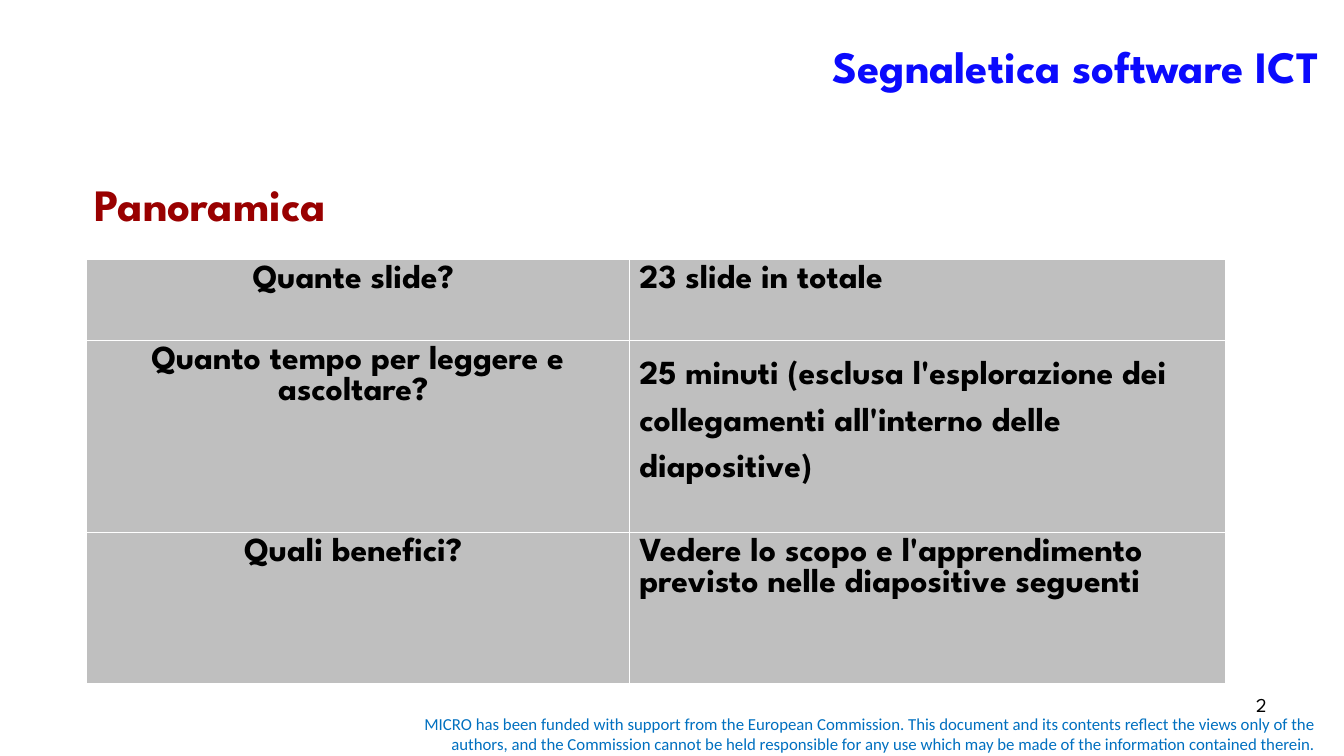
from lxml.etree import SubElement
from pptx import Presentation
from pptx.dml.color import RGBColor
from pptx.enum.text import MSO_ANCHOR, PP_ALIGN
from pptx.oxml.ns import qn
from pptx.util import Pt

SPARTAN = "League Spartan"
ROWS = [
    ("Quante slide? ", "23 slide in totale"),
    ("Quanto tempo per leggere e ascoltare? ",
     "25 minuti (esclusa l'esplorazione dei collegamenti all'interno delle diapositive)"),
    ("Quali benefici? ",
     "Vedere lo scopo e l'apprendimento previsto nelle diapositive seguenti"),
]
FUNDING = (
    "MICRO has been funded with support from the European Commission. "
    "This document and its contents reflect the views only of the authors, "
    "and the Commission cannot be held responsible for any use which may be "
    "made of the information contained therein."
)


def color(code):
    return RGBColor.from_string(code)


def style(frame, text, size, code, bold=False, align=PP_ALIGN.LEFT, face=SPARTAN):
    frame.text = text
    para = frame.paragraphs[0]
    para.alignment = align
    font = para.runs[0].font
    font.name, font.size, font.bold = face, Pt(size), bold
    font.color.rgb = color(code)
    return para


def label(slide, box, text, size, code, anchor=MSO_ANCHOR.TOP, **look):
    frame = slide.shapes.add_textbox(*map(Pt, box)).text_frame
    frame.word_wrap = True
    frame.vertical_anchor = anchor
    style(frame, text, size, code, **look)


def border(cell):
    props = cell._tc.get_or_add_tcPr()
    for at, side in enumerate(("lnL", "lnR", "lnT", "lnB")):
        line = SubElement(props, qn(f"a:{side}"), w=str(Pt(1)))
        fill = SubElement(line, qn("a:solidFill"))
        SubElement(fill, qn("a:srgbClr"), val="FFFFFF")
        props.insert(at, line)


def overview(slide, box, widths, heights):
    table = slide.shapes.add_table(len(ROWS), 2, *map(Pt, box)).table
    for column, width in zip(table.columns, widths):
        column.width = Pt(width)
    for row, height, texts in zip(table.rows, heights, ROWS):
        row.height = Pt(height)
        for cell, text, align in zip(row.cells, texts, (PP_ALIGN.CENTER, PP_ALIGN.LEFT)):
            cell.fill.solid()
            cell.fill.fore_color.rgb = color("BFBFBF")
            border(cell)
            style(cell.text_frame, text, 24, "000000", bold=True, align=align)
    table.cell(1, 1).text_frame.paragraphs[0].line_spacing = 1.5


def footer(slide, box):
    left, top, width, height = box
    label(slide, (left, top + 14.5, width, height - 14.5), FUNDING, 12, "0070C0",
          anchor=MSO_ANCHOR.MIDDLE, align=PP_ALIGN.RIGHT, face="Calibri")
    label(slide, (left + 418, top, 224, 37.5), "2", 14, "000000", align=PP_ALIGN.RIGHT)


def main():
    deck = Presentation()
    deck.slide_width, deck.slide_height = Pt(960), Pt(540)
    slide = deck.slides.add_slide(deck.slide_layouts[6])
    label(slide, (86, 1.5, 864, 90), "Segnaletica software ICT", 32, "0B0AFD",
          anchor=MSO_ANCHOR.MIDDLE, bold=True, align=PP_ALIGN.RIGHT)
    label(slide, (60.5, 123, 209, 46), "Panoramica", 32, "990000", bold=True)
    overview(slide, (61.5, 185.5, 814, 303), (388, 426), (58, 137, 108))
    footer(slide, (270, 491.5, 677, 50.5))
    deck.save("out.pptx")


if __name__ == "__main__":
    main()
